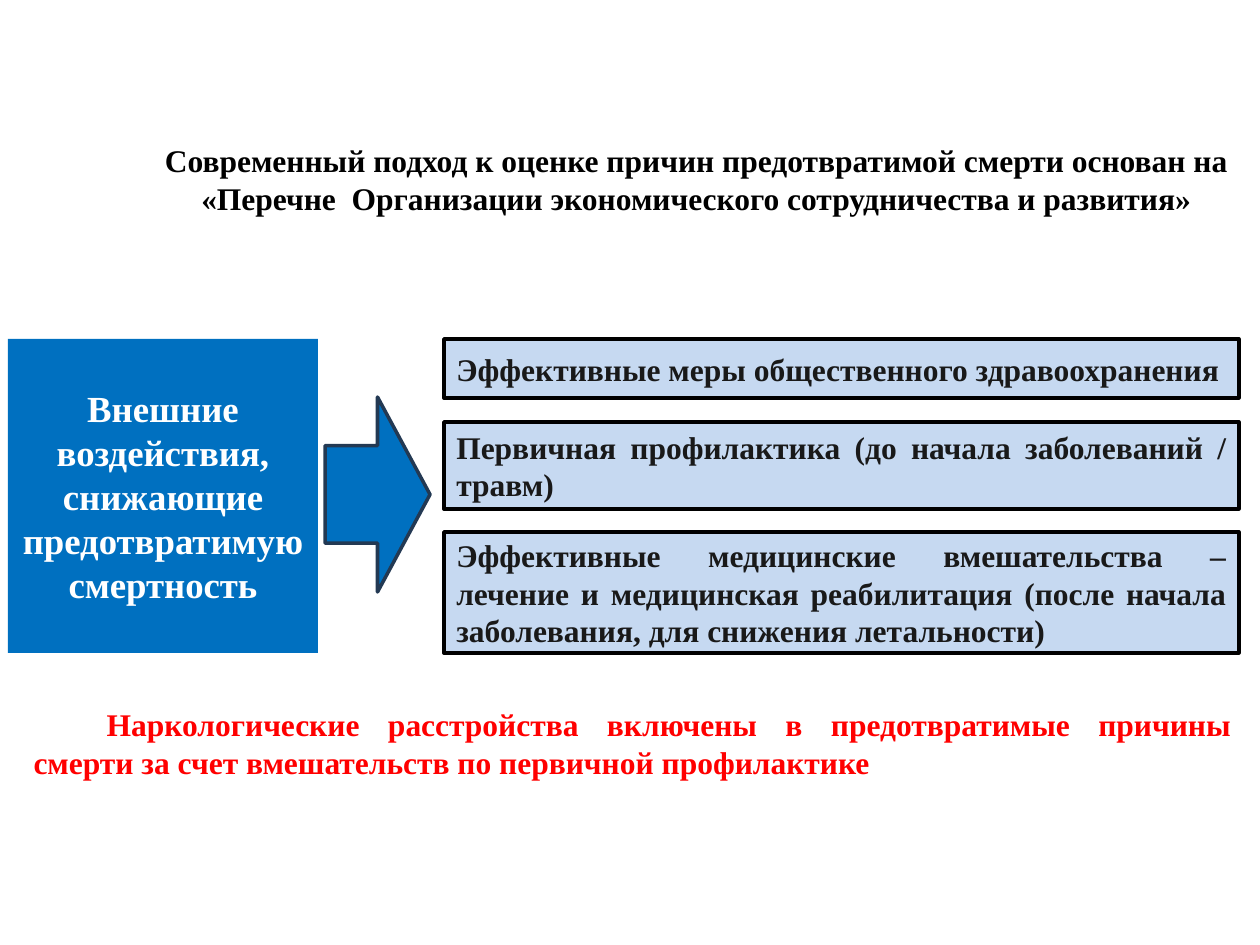
from pptx import Presentation
from pptx.dml.color import RGBColor
from pptx.enum.shapes import MSO_SHAPE
from pptx.enum.text import MSO_ANCHOR, MSO_AUTO_SIZE, PP_ALIGN
from pptx.util import Inches, Pt

RECT, ARROW = MSO_SHAPE.RECTANGLE, MSO_SHAPE.RIGHT_ARROW
MIDDLE = MSO_ANCHOR.MIDDLE
CENTER, JUSTIFY = PP_ALIGN.CENTER, PP_ALIGN.JUSTIFY
BLACK = RGBColor(0x00, 0x00, 0x00)
WHITE = RGBColor(0xFF, 0xFF, 0xFF)
RED = RGBColor(0xFF, 0x00, 0x00)
BLUE = RGBColor(0x00, 0x70, 0xC0)
NAVY = RGBColor(0x23, 0x39, 0x53)
PALE = RGBColor(0xC6, 0xD9, 0xF1)
DARK = RGBColor(0x19, 0x19, 0x19)
FONT = "Times New Roman"
SCALE = Inches(1) / 126


def write(shape, text, size, color, align):
    frame = shape.text_frame
    frame.text = text
    frame.word_wrap = True
    frame.auto_size = MSO_AUTO_SIZE.NONE
    frame.vertical_anchor = MIDDLE
    para = frame.paragraphs[0]
    para.alignment = align
    font = para.runs[0].font
    font.name, font.size, font.bold = FONT, Pt(size), True
    font.color.rgb = color


def block(kind, box, fill, edge=None):
    """Add a filled shape at a px box, outlined only if an edge colour is given."""
    shape = slide.shapes.add_shape(kind, *[round(n * SCALE) for n in box])
    shape.shadow.inherit = False
    shape.fill.solid()
    shape.fill.fore_color.rgb = fill
    if edge is None:
        shape.line.fill.background()
    else:
        shape.line.color.rgb = edge
        shape.line.width = Pt(2)
    return shape


prs = Presentation()
prs.slide_width, prs.slide_height = Inches(10), Inches(7.5)
slide = prs.slides.add_slide(prs.slide_layouts[5])

# Title
title = slide.shapes.title
title.left, title.top, title.width, title.height = [
    round(n * SCALE) for n in (152, 126, 1089, 106)]
write(title, "Современный подход к оценке причин предотвратимой смерти основан на "
      "«Перечне  Организации экономического сотрудничества и развития»",
      18, BLACK, CENTER)

# Influences and the arrow to the measures
cause = block(RECT, (8, 339, 310, 314), BLUE)
write(cause, "Внешние воздействия, снижающие предотвратимую смертность",
      21, WHITE, CENTER)
block(ARROW, (325, 397, 105, 195), BLUE, NAVY)

# Measures
measures = [
    (339, 59, "Эффективные меры общественного здравоохранения"),
    (422, 87, "Первичная профилактика (до начала заболеваний / травм)"),
    (532, 121, "Эффективные медицинские вмешательства – лечение и медицинская "
     "реабилитация (после начала заболевания, для снижения летальности)"),
]
for top, height, text in measures:
    write(block(RECT, (444, top, 795, height), PALE, BLACK), text, 18, DARK, JUSTIFY)

# Conclusion
note = slide.shapes.add_textbox(*[round(n * SCALE) for n in (26, 701, 1213, 83)])
write(note, "Наркологические расстройства включены в предотвратимые причины смерти "
      "за счет вмешательств по первичной профилактике", 18, RED, JUSTIFY)
frame = note.text_frame
frame.margin_left = frame.margin_right = Inches(0.06)
frame.margin_top = frame.margin_bottom = Inches(0.03)
props = frame.paragraphs[0]._p.get_or_add_pPr()
props.set("marL", "0")
props.set("indent", str(Inches(0.58)))

prs.save("out.pptx")
